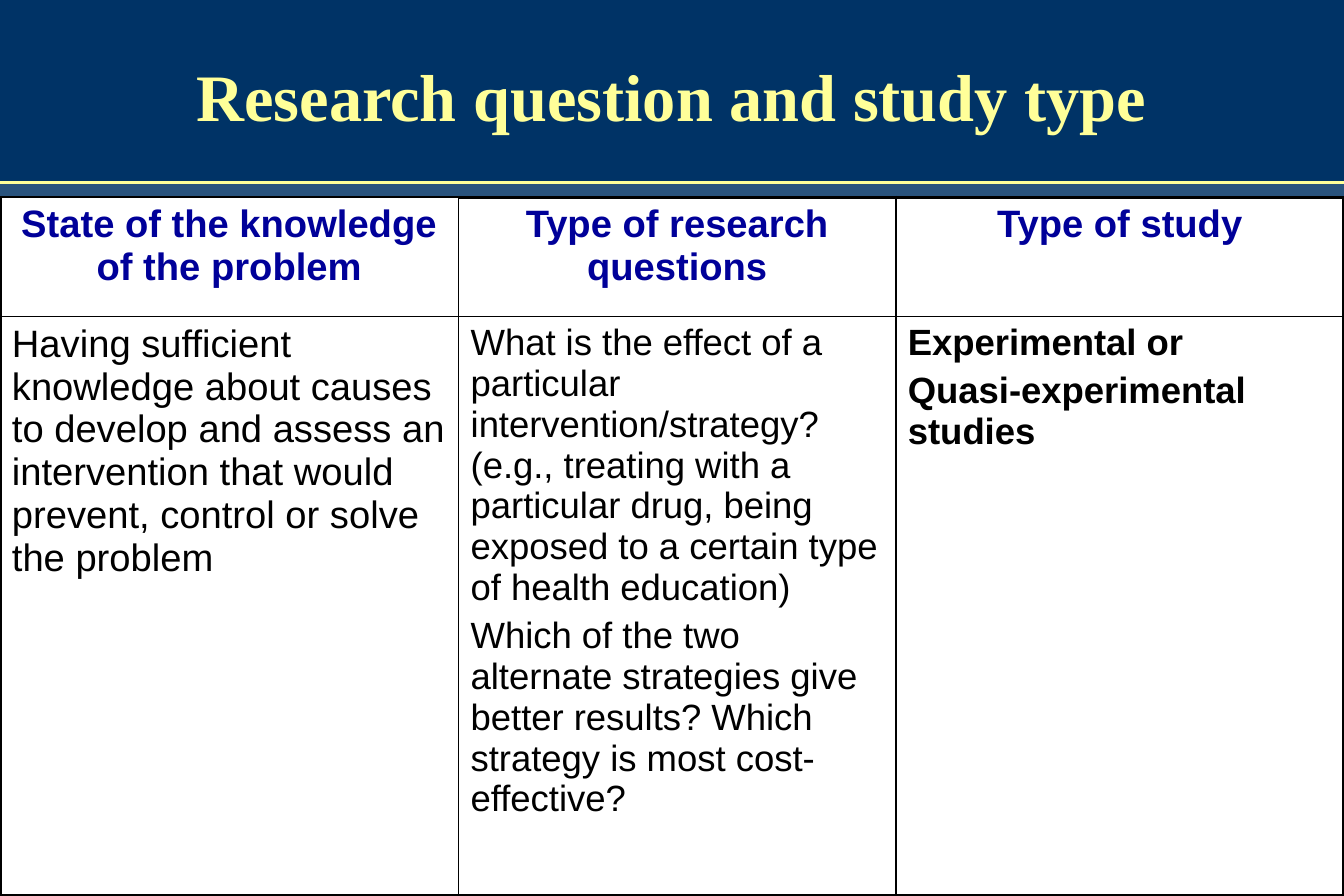
from lxml.etree import SubElement
from pptx import Presentation
from pptx.dml.color import RGBColor
from pptx.enum.shapes import MSO_CONNECTOR as Connector, MSO_SHAPE as Shape
from pptx.enum.text import MSO_ANCHOR as Anchor, PP_ALIGN as Align
from pptx.oxml import parse_xml
from pptx.oxml.ns import nsdecls, qn
from pptx.util import Inches, Pt

COLORS = {
    "background": "29537D",
    "banner": "003366",
    "title": "FFFF99",
    "heading": "000099",
    "body": "000000",
    "cell": "FFFFFF",
    "border": "000000",
}
WIDTH, HEIGHT = 11.25, 7.5
COLUMN_WIDTHS = (3.84, 3.66, 3.75)
ROW_HEIGHTS = (1.0, 4.85)
HEADINGS = (
    "State of the knowledge of the problem",
    "Type of research questions",
    "Type of study",
)
ANSWERS = (
    (["Having sufficient knowledge about causes to develop and assess an "
      "intervention that would prevent, control or solve the problem"],
     dict(size=23)),
    (["What is the effect of a particular intervention/strategy? (e.g., "
      "treating with a particular drug, being exposed to a certain type of "
      "health education)",
      "Which of the two alternate strategies give better results? Which "
      "strategy is most cost-effective?"],
     dict(size=22)),
    (["Experimental or", "Quasi-experimental studies"],
     dict(size=22, bold=True)),
)


def rgb(name):
    return RGBColor.from_string(COLORS[name])


def write(frame, paragraphs, size, color="body", font="Arial", bold=False,
          align=Align.LEFT, before=0.2, spacing=None):
    frame.word_wrap = True
    for index, text in enumerate(paragraphs):
        paragraph = frame.paragraphs[0] if index == 0 else frame.add_paragraph()
        paragraph.alignment = align
        paragraph.space_before = Pt(before * size)
        if spacing:
            paragraph.line_spacing = spacing
        run = paragraph.add_run()
        run.text = text
        run.font.size = Pt(size)
        run.font.name = font
        run.font.bold = bold
        run.font.color.rgb = rgb(color)


def set_borders(cell, **widths):
    properties = cell._tc.get_or_add_tcPr()
    for index, (side, width) in enumerate(widths.items()):
        properties.insert(index, parse_xml(
            f'<a:ln{side} {nsdecls("a")} w="{Pt(width)}"><a:solidFill>'
            f'<a:srgbClr val="{COLORS["border"]}"/></a:solidFill></a:ln{side}>'))


def add_banner(slide, left, top, width, height):
    banner = slide.shapes.add_shape(Shape.RECTANGLE, Inches(left), Inches(top),
                                    Inches(width), Inches(height))
    banner.shadow.inherit = False
    banner.fill.solid()
    banner.fill.fore_color.rgb = rgb("banner")
    banner.line.fill.background()

    bottom = Inches(top + height)
    rule = slide.shapes.add_connector(Connector.STRAIGHT, Inches(left), bottom,
                                      Inches(left + width), bottom)
    rule.line.color.rgb = rgb("title")
    rule.line.width = Pt(2)
    SubElement(rule._element.spPr, qn("a:effectLst"))

    title = slide.shapes.add_textbox(Inches(left + 0.84), Inches(top + 0.17),
                                     Inches(width - 1.69), Inches(height - 0.17))
    title.text_frame.vertical_anchor = Anchor.MIDDLE
    write(title.text_frame, ["Research question and study type"], 40,
          color="title", font="Times New Roman", bold=True,
          align=Align.CENTER, before=0, spacing=0.85)


def add_study_table(slide, left, top, width, height):
    table = slide.shapes.add_table(len(ROW_HEIGHTS), len(COLUMN_WIDTHS),
                                   Inches(left), Inches(top),
                                   Inches(width), Inches(height)).table
    table.first_row = False
    table.horz_banding = False
    for column, column_width in zip(table.columns, COLUMN_WIDTHS):
        column.width = Inches(column_width)
    for row, row_height in zip(table.rows, ROW_HEIGHTS):
        row.height = Inches(row_height)

    heading_format = dict(size=23, color="heading", bold=True, align=Align.CENTER)
    rows = ([([heading], heading_format) for heading in HEADINGS], ANSWERS)
    last_row, last_column = len(rows) - 1, len(COLUMN_WIDTHS) - 1
    for r, contents in enumerate(rows):
        for c, (paragraphs, text_format) in enumerate(contents):
            cell = table.cell(r, c)
            cell.fill.solid()
            cell.fill.fore_color.rgb = rgb("cell")
            write(cell.text_frame, paragraphs, **text_format)
            set_borders(cell,
                        L=2.25 if c == 0 else 1,
                        R=2.25 if c == last_column else 1,
                        T=2.25 if r == 0 and c > 0 else 1,
                        B=2.25 if r == last_row else 1)


def main():
    deck = Presentation()
    deck.slide_width, deck.slide_height = Inches(WIDTH), Inches(HEIGHT)
    slide = deck.slides.add_slide(deck.slide_layouts[6])
    slide.background.fill.solid()
    slide.background.fill.fore_color.rgb = rgb("background")
    add_banner(slide, 0, 0, WIDTH, 1.53)
    add_study_table(slide, 0, 1.65, WIDTH, HEIGHT - 1.65)
    deck.save("out.pptx")


if __name__ == "__main__":
    main()
